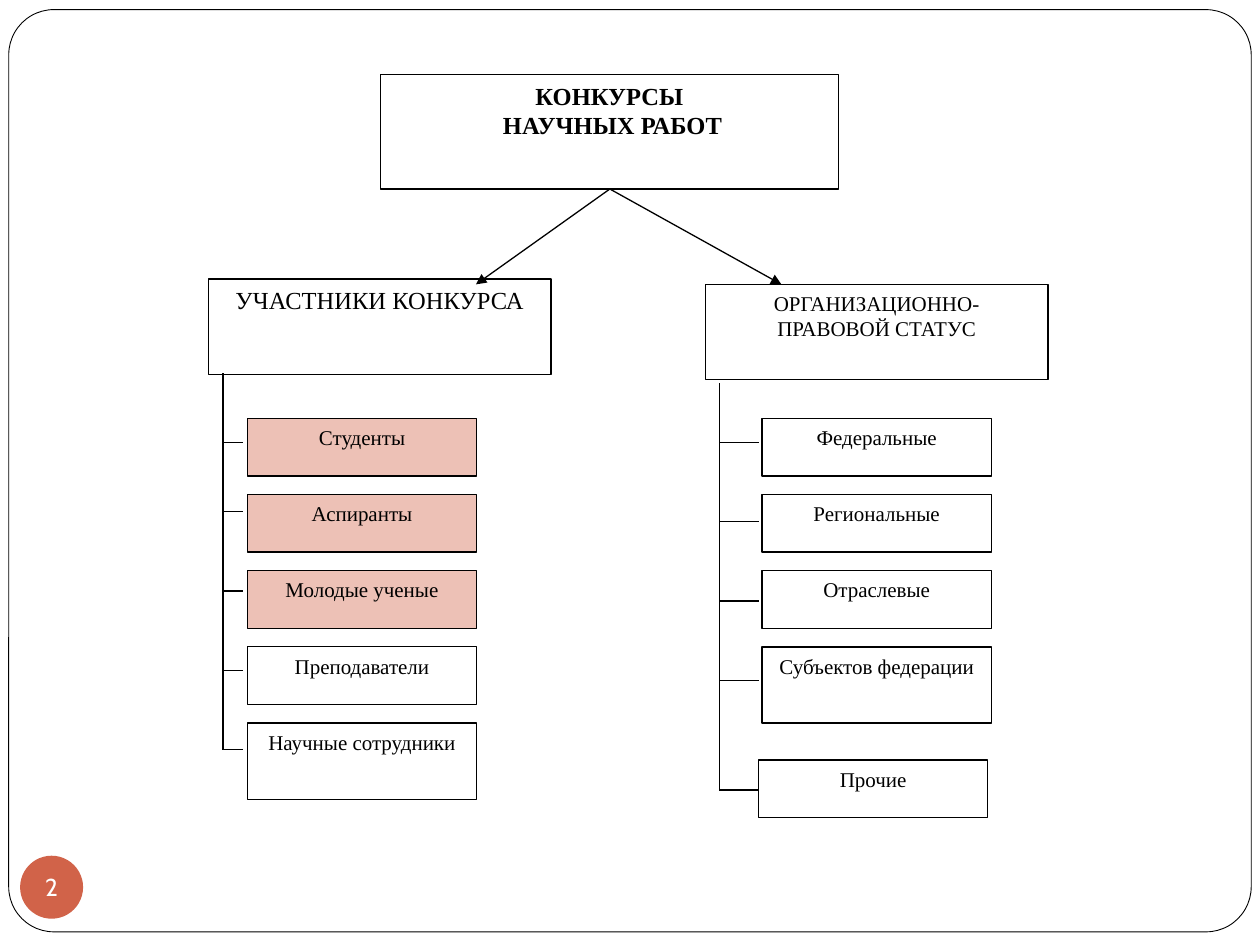
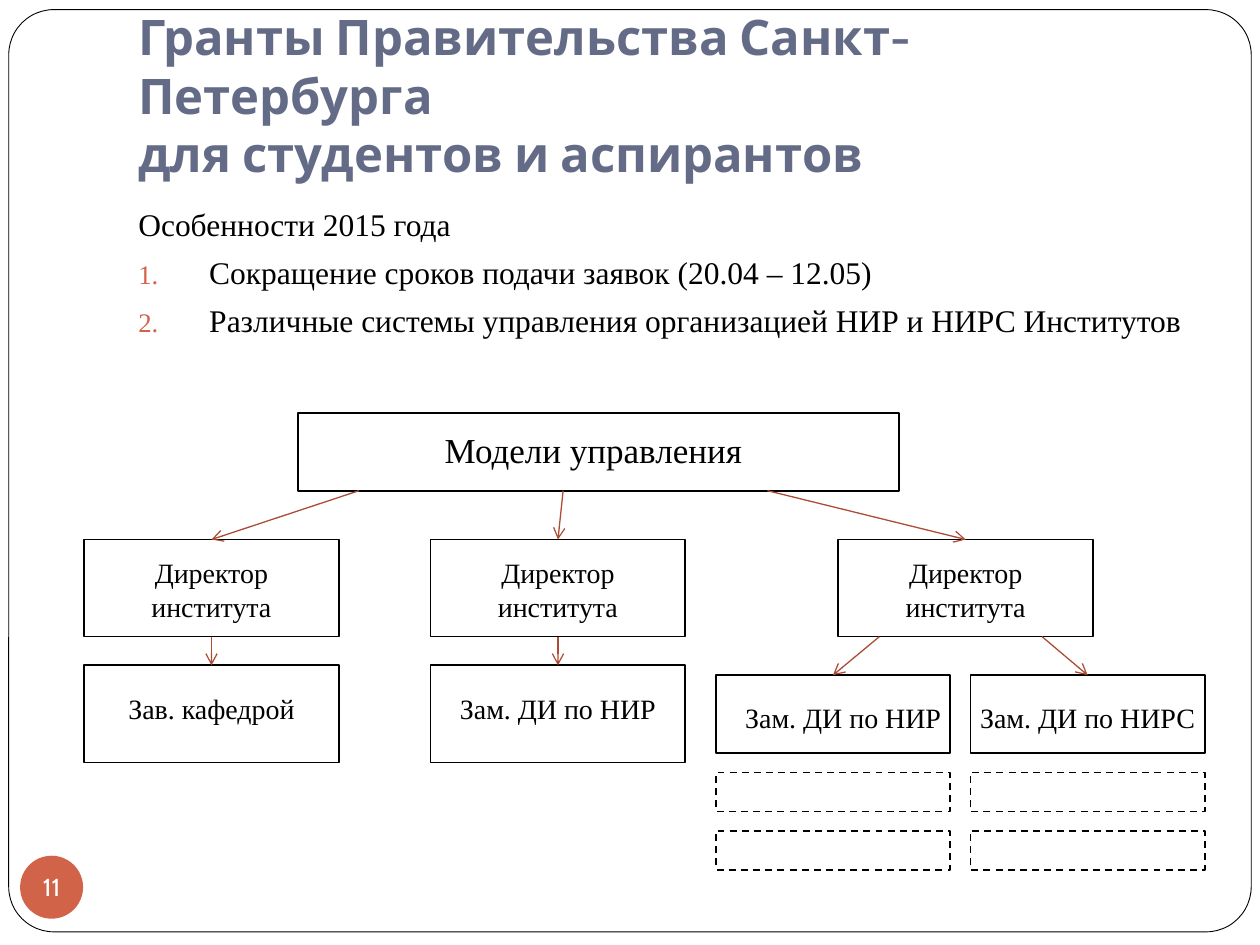
from typing import NamedTuple

from lxml import etree
from pptx import Presentation
from pptx.dml.color import RGBColor
from pptx.enum import dml, shapes, text
from pptx.oxml.ns import qn
from pptx.util import Pt

SERIF, SANS = "Times New Roman", "Cabin"
BLACK, WHITE = "000000", "FFFFFF"
ACCENT, ARROW, PINK, TITLE = "D16349", "AD4C35", "EDC1B6", "646B86"
RECT = shapes.MSO_SHAPE.RECTANGLE


class Box(NamedTuple):
    x: float
    y: float
    w: float
    h: float


class Style(NamedTuple):
    size: float
    font: str = SERIF
    color: str = BLACK
    bold: bool = False


class Branch(NamedTuple):
    """A vertical trunk with a tick leading to each item box."""
    trunk: float
    top: float
    tick_end: float
    ticks: list[float]
    items: list[tuple[str, Box, str]]


def rgb(value: str) -> RGBColor:
    return RGBColor.from_string(value)


def write(tf, lines: list[str], style: Style, align=text.PP_ALIGN.CENTER) -> None:
    for i, line in enumerate(lines):
        p = tf.paragraphs[0] if i == 0 else tf.add_paragraph()
        p.alignment = align
        for j, part in enumerate(line.split("\n")):
            if j:
                p.add_line_break()
            r = p.add_run()
            r.text = part
            r.font.size, r.font.name = Pt(style.size), style.font
            r.font.bold, r.font.color.rgb = style.bold, rgb(style.color)


def add_box(s, box: Box, fill: str | None = WHITE, line: str | None = BLACK,
            width: float = 0.75, kind=RECT, dashed: bool = False):
    sp = s.shapes.add_shape(kind, *map(Pt, box))
    sp.shadow.inherit = False
    if fill:
        sp.fill.solid()
        sp.fill.fore_color.rgb = rgb(fill)
    else:
        sp.fill.background()
    if line:
        sp.line.color.rgb = rgb(line)
        sp.line.width = Pt(width)
        if dashed:
            sp.line.dash_style = dml.MSO_LINE.DASH
    else:
        sp.line.fill.background()
    return sp


def add_label_box(s, box: Box, lines: list[str], style: Style, fill: str = WHITE) -> None:
    tf = add_box(s, box, fill).text_frame
    tf.word_wrap = True
    tf.vertical_anchor = text.MSO_ANCHOR.TOP
    write(tf, lines, style)


def add_text(s, box: Box, lines: list[str], style: Style, align=text.PP_ALIGN.CENTER):
    tf = s.shapes.add_textbox(*map(Pt, box)).text_frame
    tf.word_wrap = True
    write(tf, lines, style, align)
    return tf


def add_line(s, x1: float, y1: float, x2: float, y2: float,
             color: str = BLACK, head: str | None = None) -> None:
    sp = s.shapes.add_connector(shapes.MSO_CONNECTOR.STRAIGHT, *map(Pt, (x1, y1, x2, y2)))
    sp.line.color.rgb = rgb(color)
    sp.line.width = Pt(0.75)
    if head:
        etree.SubElement(sp.line._get_or_add_ln(), qn("a:tailEnd"), type=head)
    etree.SubElement(sp._element.spPr, qn("a:effectLst"))


def number_paragraph(p) -> None:
    pPr = p._p.get_or_add_pPr()
    color = etree.SubElement(pPr, qn("a:buClr"))
    etree.SubElement(color, qn("a:srgbClr"), val=ACCENT)
    etree.SubElement(pPr, qn("a:buSzPct"), val="85000")
    etree.SubElement(pPr, qn("a:buAutoNum"), type="arabicPeriod")


def new_slide(prs):
    s = prs.slides.add_slide(prs.slide_layouts[6])
    frame = add_box(s, Box(5, 5.5, 710, 527), width=0.5,
                    kind=shapes.MSO_SHAPE.ROUNDED_RECTANGLE)
    frame.adjustments[0] = 0.049
    return s


def add_page_number(s, number: int) -> None:
    sp = add_box(s, Box(11.5, 489, 36, 36), ACCENT, None, kind=shapes.MSO_SHAPE.OVAL)
    tf = sp.text_frame
    tf.margin_left = tf.margin_right = tf.margin_top = tf.margin_bottom = 0
    tf.word_wrap = False
    tf.vertical_anchor = text.MSO_ANCHOR.MIDDLE
    write(tf, [str(number)], Style(14, SANS, WHITE))


def draw_branch(s, branch: Branch) -> None:
    for label, box, fill in branch.items:
        add_label_box(s, box, [label], Style(12), fill)
    add_line(s, branch.trunk, branch.top, branch.trunk, branch.ticks[-1])
    for y in branch.ticks:
        add_line(s, branch.trunk, y, branch.tick_end, y)


def contests_slide(prs) -> None:
    s = new_slide(prs)

    # Heading and its two branches
    add_label_box(s, Box(217.5, 42.5, 261.5, 65.5), ["КОНКУРСЫ", " НАУЧНЫХ РАБОТ"],
                  Style(14, bold=True))
    add_label_box(s, Box(119, 159.5, 196, 54.5), ["УЧАСТНИКИ КОНКУРСА"], Style(14))
    add_label_box(s, Box(403, 162.5, 196, 54.5), ["ОРГАНИЗАЦИОННО-ПРАВОВОЙ СТАТУС"], Style(12))
    for x in (272, 446.5):
        add_line(s, 348.5, 108, x, 162.5, head="triangle")

    # Item lists under each branch
    top, step, width, height, tall = 239, 43.55, 131, 33, 43.5
    first_tick, tick_step = 252.7, 45.36

    def stacked(x: float, i: int, h: float = height) -> Box:
        return Box(x, top + step * i, width, h)

    people = ["Студенты", "Аспиранты", "Молодые ученые", "Преподаватели", "Научные сотрудники"]
    draw_branch(s, Branch(
        127.4, 213.4, 139,
        [first_tick] + [292.3 + tick_step * i for i in range(4)],
        [(name, stacked(141.4, i, tall if i == 4 else height), PINK if i < 3 else WHITE)
         for i, name in enumerate(people)]))

    statuses = ["Федеральные", "Региональные", "Отраслевые", "Субъектов федерации"]
    draw_branch(s, Branch(
        411, 219, 433.5,
        [first_tick + tick_step * i for i in range(4)] + [451.4],
        [(name, stacked(435.5, i, tall if i == 3 else height), WHITE)
         for i, name in enumerate(statuses)]
        + [("Прочие", Box(433.5, 434.3, width, height), WHITE)]))

    add_page_number(s, 2)


def grants_slide(prs) -> None:
    s = new_slide(prs)

    # Title
    tf = add_text(s, Box(72, 21.6, 612, 90),
                  ["Гранты Правительства Санкт-Петербурга\nдля студентов и аспирантов"],
                  Style(28, SANS, TITLE, True), text.PP_ALIGN.LEFT)
    tf.vertical_anchor = text.MSO_ANCHOR.BOTTOM
    tf.margin_bottom = Pt(7.2)

    # Points of the year
    tf = add_text(s, Box(72, 113.5, 612, 99.5),
                  ["Особенности 2015 года",
                   "Сокращение сроков подачи заявок (20.04 – 12.05)",
                   "Различные системы управления организацией НИР и НИРС Институтов"],
                  Style(18), text.PP_ALIGN.LEFT)
    for i, p in enumerate(tf.paragraphs):
        p.space_before = Pt(5.8)
        pPr = p._p.get_or_add_pPr()
        pPr.set("marL", str(Pt(40.5)))
        pPr.set("indent", str(Pt(-40.5)))
        if i:
            number_paragraph(p)

    # Boxes of the management models
    columns, deputies = (48, 246, 479), (409, 554.5)
    w, h, narrow, low = 145.7, 55.5, 134, 44.6
    director_y, second_y, deputy_y = 308.3, 380.2, 385.8
    boxes = [Box(170.3, 236, 343.5, low)]
    boxes += [Box(x, director_y, w, h) for x in columns]
    boxes += [Box(x, second_y, w, h) for x in columns[:2]]
    boxes += [Box(x, deputy_y, narrow, low) for x in deputies]
    for box in boxes:
        add_box(s, box, None, width=1)
    for y in (441.5, 474.7):
        for x in deputies:
            add_box(s, Box(x, y, narrow, 22.3), None, width=1, dashed=True)

    # Arrows
    centers = [x + w / 2 for x in columns]
    root_bottom, director_bottom = 280.4, director_y + h
    for start, end in zip((205.2, 321.8, 438.5), centers):
        add_line(s, start, root_bottom, end, director_y, ARROW, "arrow")
    for x in centers[:2]:
        add_line(s, x, director_bottom, x, second_y, ARROW, "arrow")
    for start, x in zip((502.5, 595.5), deputies):
        add_line(s, start, director_bottom, x + narrow / 2, deputy_y, ARROW, "arrow")

    # Labels
    add_text(s, Box(205.2, 241.2, 267.8, 31), ["Модели управления"], Style(20))
    labels = [("Директор института", x, 314) for x in columns]
    labels += [("Зав. кафедрой", columns[0], 391.7), ("Зам. ДИ по НИР", columns[1], 391.7),
               ("Зам. ДИ по НИР", deputies[0], 396.9), ("Зам. ДИ по НИРС", 548.7, 396.9)]
    for label, x, y in labels:
        add_text(s, Box(x, y, w, 45.5 if y == 314 else 26), [label], Style(16))

    add_page_number(s, 11)


def main() -> None:
    prs = Presentation()
    prs.slide_width, prs.slide_height = Pt(720), Pt(540)
    contests_slide(prs)
    grants_slide(prs)
    prs.save("out.pptx")


if __name__ == "__main__":
    main()
